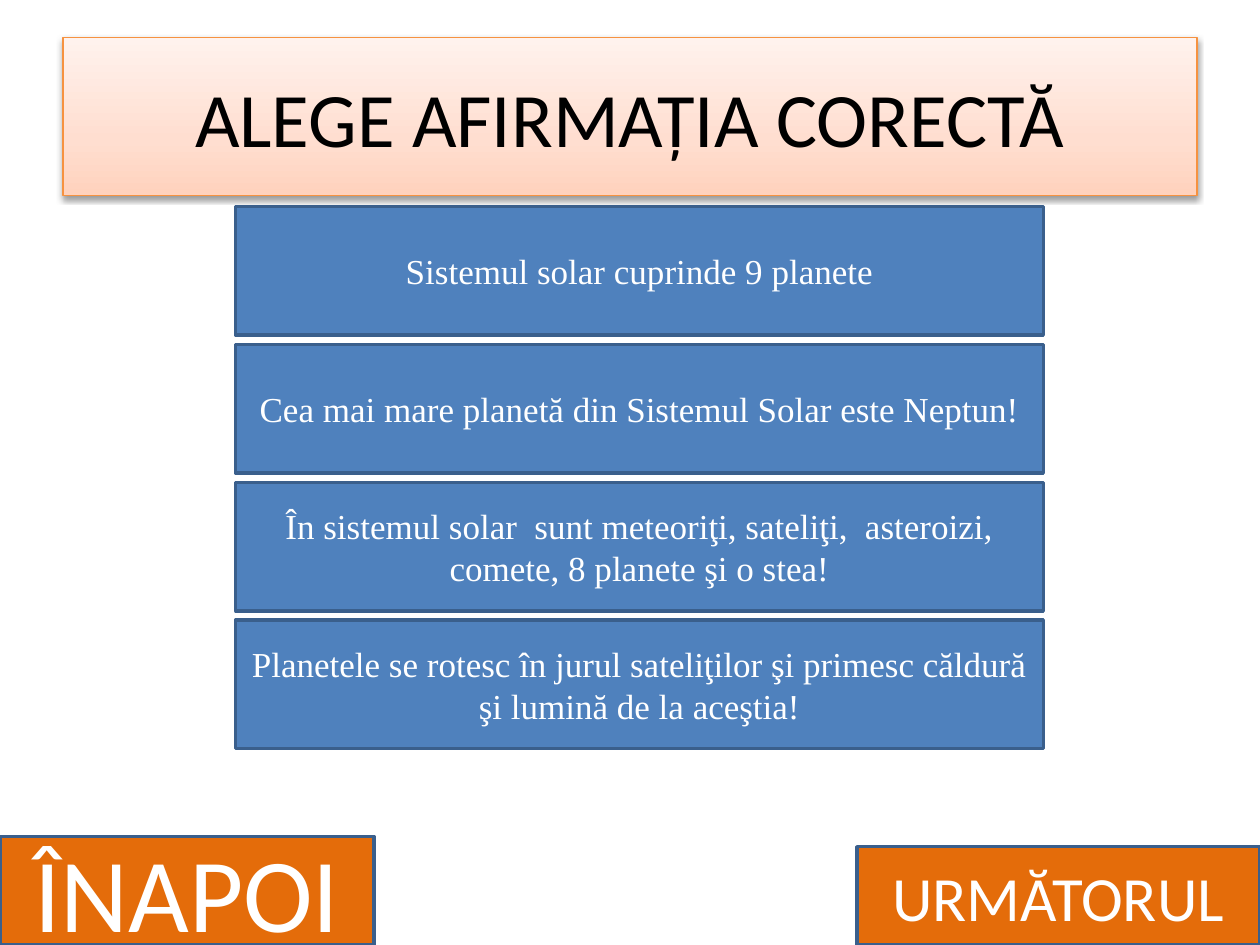
from lxml import etree
from pptx import Presentation
from pptx.dml.color import RGBColor
from pptx.enum.shapes import MSO_SHAPE as Shape
from pptx.enum.text import MSO_ANCHOR as Anchor, PP_ALIGN as Align
from pptx.oxml import parse_xml
from pptx.oxml.ns import nsdecls, qn
from pptx.util import Inches, Pt

BLUE = RGBColor(0x4F, 0x81, 0xBD)
BLUE_EDGE = RGBColor(0x3A, 0x5F, 0x8C)
ORANGE = RGBColor(0xE4, 0x6C, 0x0A)
TITLE_EDGE = RGBColor(0xF6, 0x92, 0x40)
BLACK = RGBColor(0, 0, 0)
WHITE = RGBColor(0xFF, 0xFF, 0xFF)
PEACH_STOPS = [
    (0, RGBColor(0xFF, 0xD2, 0xBD)),
    (35, RGBColor(0xFF, 0xDE, 0xD0)),
    (100, RGBColor(0xFF, 0xF2, 0xED)),
]

TITLE_FONT = {"name": "Calibri", "size": Pt(44)}
ANSWER_FONT = {"name": "Times New Roman", "size": Pt(20)}
BACK_FONT = {"name": "Calibri", "size": Pt(60)}
NEXT_FONT = {"name": "Calibri", "size": Pt(36)}

ANSWERS = [
    "Sistemul solar cuprinde 9 planete",
    "Cea mai mare planetă din Sistemul Solar este Neptun!",
    "În sistemul solar  sunt meteoriţi, sateliţi,  asteroizi, comete, 8 planete şi o stea!",
    "Planetele se rotesc în jurul sateliţilor şi primesc căldură şi lumină de la aceştia!",
]
ANSWER_TOP = 1.64
ANSWER_PITCH = 1.094


def write_text(shape, text, font_format, color):
    """Put one centred line of formatted text in a shape."""
    frame = shape.text_frame
    frame.text = text
    frame.word_wrap = True
    frame.vertical_anchor = Anchor.MIDDLE
    paragraph = frame.paragraphs[0]
    paragraph.alignment = Align.CENTER
    font = paragraph.runs[0].font
    for name, value in font_format.items():
        setattr(font, name, value)
    font.color.rgb = color


def set_line(shape, color, width):
    """Give a shape a solid outline."""
    shape.line.color.rgb = color
    shape.line.width = Pt(width)


def set_gradient(shape, stops, angle):
    """Fill a shape with a linear gradient of any number of stops."""
    shape.fill.gradient()
    shape.fill.gradient_angle = angle
    stop_list = shape.element.spPr.find(".//" + qn("a:gsLst"))
    for old_stop in list(stop_list):
        stop_list.remove(old_stop)
    for position, color in stops:
        stop = etree.SubElement(stop_list, qn("a:gs"), pos=str(position * 1000))
        etree.SubElement(stop, qn("a:srgbClr"), val=str(color))


def add_shadow(shape):
    """Add a soft black shadow below a shape."""
    shape.element.spPr.append(parse_xml(
        f'<a:effectLst {nsdecls("a")}>'
        f'<a:outerShdw blurRad="{Pt(3.1)}" dist="{Pt(1.6)}" dir="5400000" rotWithShape="0">'
        '<a:srgbClr val="000000"><a:alpha val="38000"/></a:srgbClr>'
        '</a:outerShdw></a:effectLst>'
    ))


def add_title(slide, text):
    """Place and format the title placeholder."""
    title = slide.shapes.title
    place = {"left": 0.5, "top": 0.3, "width": 9, "height": 1.25}
    for name, value in place.items():
        setattr(title, name, Inches(value))
    set_gradient(title, PEACH_STOPS, 90)
    set_line(title, TITLE_EDGE, 0.75)
    add_shadow(title)
    write_text(title, text, TITLE_FONT, BLACK)


def add_button(slide, text, box, fill_color, font_format):
    """Add a blank action button with a caption."""
    button = slide.shapes.add_shape(Shape.ACTION_BUTTON_CUSTOM, *map(Inches, box))
    button.shadow.inherit = False
    button.fill.solid()
    button.fill.fore_color.rgb = fill_color
    set_line(button, BLUE_EDGE, 2)
    write_text(button, text, font_format, WHITE)


def main():
    """Build the quiz slide and save it."""
    presentation = Presentation()
    presentation.slide_width = Inches(10)
    presentation.slide_height = Inches(7.5)
    slide = presentation.slides.add_slide(presentation.slide_layouts[5])
    add_title(slide, "ALEGE AFIRMAȚIA CORECTĂ")
    for index, answer in enumerate(ANSWERS):
        box = (1.87, ANSWER_TOP + index * ANSWER_PITCH, 6.41, 1.02)
        add_button(slide, answer, box, BLUE, ANSWER_FONT)
    add_button(slide, "URMĂTORUL", (6.8, 6.72, 3.2, 0.78), ORANGE, NEXT_FONT)
    add_button(slide, "ÎNAPOI", (0, 6.64, 2.97, 0.86), ORANGE, BACK_FONT)
    presentation.save("out.pptx")


if __name__ == "__main__":
    main()
